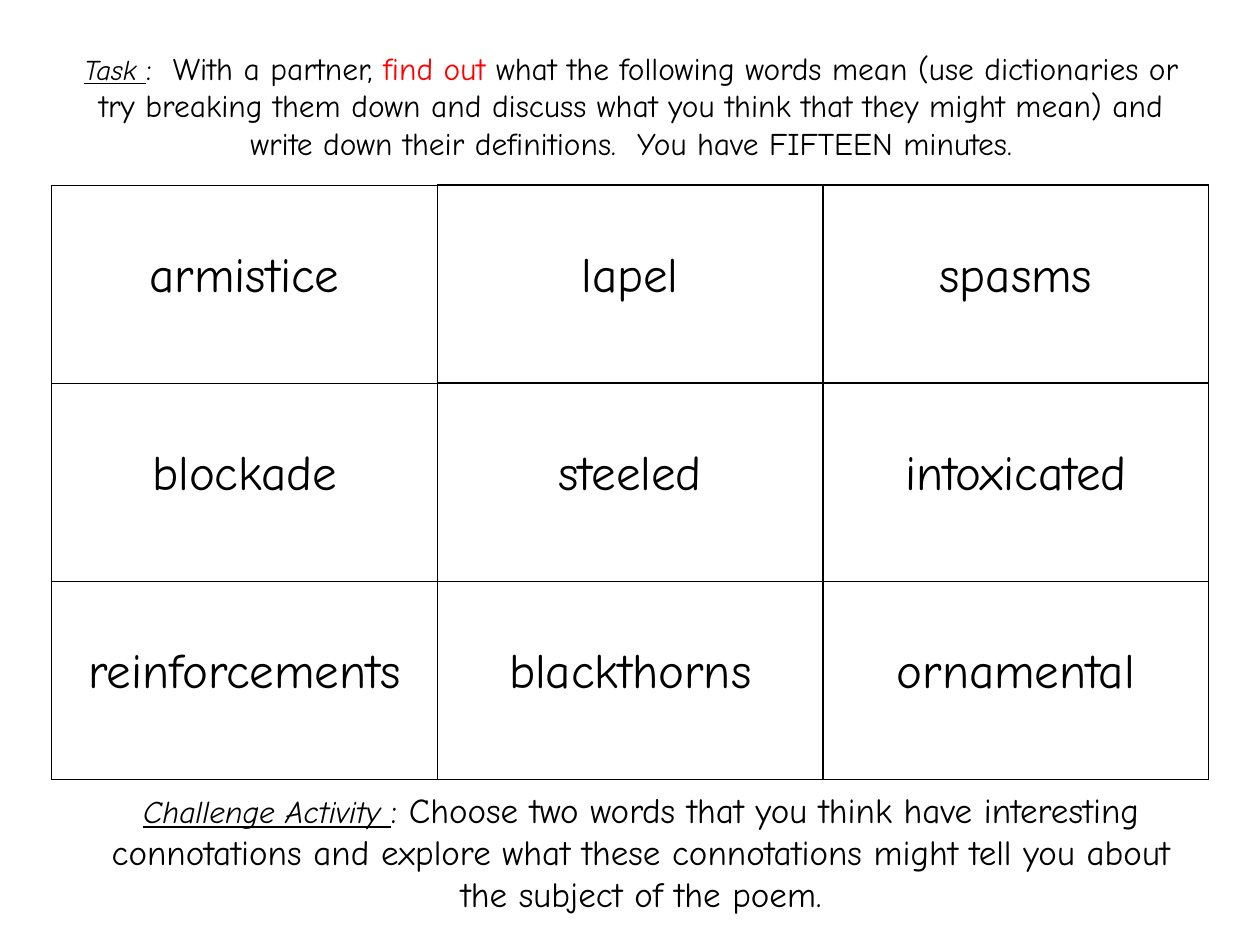
from lxml import etree
from pptx import Presentation
from pptx import util as u
from pptx.dml.color import RGBColor
from pptx.enum import text
from pptx.oxml.ns import qn

FONT = "Comic Neue"
COLORS = {"ink": "000000", "accent": "FF0000"}
TASK = [
    ("Task ", 16.2, "ink", True),
    (":  With a partner, ", 18, "ink", False),
    ("find out ", 18, "accent", False),
    ("what the following words mean (use dictionaries or try breaking them "
     "down and discuss what you think that they might mean) and write down "
     "their definitions.  You have FIFTEEN minutes.", 18, "ink", False),
]
CHALLENGE = [
    ("Challenge Activity ", 18, "ink", True),
    (": Choose two words that you think have interesting connotations and "
     "explore what these connotations might tell you about the subject of "
     "the poem.", 20, "ink", False),
]
WORDS = [
    ("armistice", "lapel", "spasms"),
    ("blockade", "steeled", "intoxicated"),
    ("reinforcements", "blackthorns", "ornamental"),
]
COL_W, ROW_H = 220.4, 113.2
THIN, NORMAL = 0.25, 1


def color(name):
    return RGBColor.from_string(COLORS[name])


def add_instruction(s, box, runs, top, bottom):
    tf = s.shapes.add_textbox(*map(u.Pt, box)).text_frame
    tf.word_wrap = True
    tf.vertical_anchor = text.MSO_ANCHOR.MIDDLE
    tf.margin_top, tf.margin_bottom = u.Pt(top), u.Pt(bottom)
    p = tf.paragraphs[0]
    p.alignment = text.PP_ALIGN.CENTER
    p.font.name = FONT
    for wording, size, ink, label in runs:
        r = p.add_run()
        r.text = wording
        r.font.name = FONT
        r.font.size = u.Pt(size)
        r.font.color.rgb = color(ink)
        r.font.italic = r.font.underline = label


def set_borders(cell, widths):
    tcPr = cell._tc.get_or_add_tcPr()
    for i, (side, width) in enumerate(widths.items()):
        ln = etree.Element(qn("a:ln" + side), w=str(u.Pt(width)))
        fill = etree.SubElement(ln, qn("a:solidFill"))
        etree.SubElement(fill, qn("a:srgbClr"), val=COLORS["ink"])
        tcPr.insert(i, ln)


def add_words(s):
    rows, cols = len(WORDS), len(WORDS[0])
    table = s.shapes.add_table(rows, cols, u.Pt(29.5), u.Pt(105.8),
                               u.Pt(COL_W * cols), u.Pt(ROW_H * rows)).table
    table.first_row = table.horz_banding = False
    for col in table.columns:
        col.width = u.Pt(COL_W)
    for i, words in enumerate(WORDS):
        table.rows[i].height = u.Pt(ROW_H)
        for j, word in enumerate(words):
            cell = table.cell(i, j)
            cell.fill.background()
            cell.margin_top = u.Pt(36)
            p = cell.text_frame.paragraphs[0]
            p.text = word
            p.alignment = text.PP_ALIGN.CENTER
            p.font.name = FONT
            p.font.size = u.Pt(28)
            p.font.color.rgb = color("ink")
            first = (i, j) == (0, 0)
            widths = dict.fromkeys("LRTB", THIN if first else NORMAL)
            if (i, j) == (0, 1):
                widths["L"] = THIN
            if (i, j) == (1, 0):
                widths["T"] = THIN
            set_borders(cell, widths)


def main():
    prs = Presentation()
    prs.slide_width, prs.slide_height = u.Pt(720), u.Pt(540)
    s = prs.slides.add_slide(prs.slide_layouts[6])
    add_instruction(s, (36.7, 15.1, 648, 90), TASK, 3.6, 3.6)
    add_words(s)
    add_instruction(s, (42.5, 455.8, 648, 84.2), CHALLENGE, 0, 23)
    prs.save("out.pptx")


if __name__ == "__main__":
    main()
